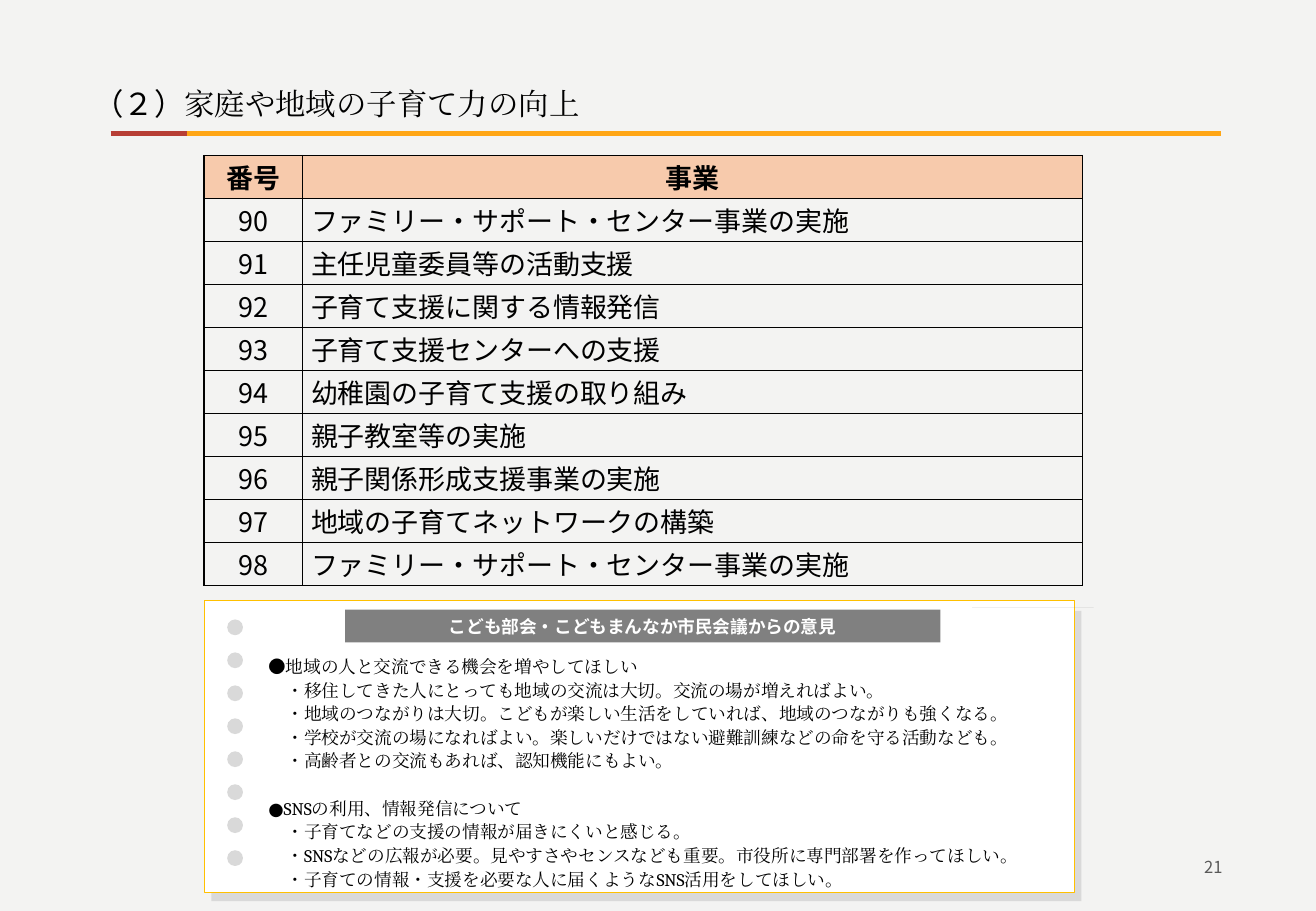
from lxml.etree import SubElement
from pptx import Presentation
from pptx.dml.color import RGBColor
from pptx.enum.shapes import MSO_CONNECTOR, MSO_SHAPE
from pptx.enum.text import MSO_ANCHOR, PP_ALIGN
from pptx.oxml.ns import qn
from pptx.util import Inches, Pt

THEME = {
    "background": "F3F3F2", "text": "000000", "muted": "595959", "light": "FFFFFF",
    "header": "F7CAAC", "amber": "FFA615", "red": "B73E35", "gold": "FFC000",
    "pale": "D9D9D9", "gray": "808080",
    "sans": "Noto Sans CJK JP", "serif": "Cambria", "latin": "Arial", "label": "Calibri",
    "title_size": 18, "table_size": 16, "note_size": 10.5, "number_size": 9.8,
}

TITLE = [("（２", "sans"), ("）", "latin"), ("家庭や地域の子育て力の向上", "serif")]
PAGE_NUMBER = "21"
TABLE_HEADER = ("番号", "事業")
FIRST_NUMBER = 90
PROJECTS = [
    "ファミリー・サポート・センター事業の実施",
    "主任児童委員等の活動支援",
    "子育て支援に関する情報発信",
    "子育て支援センターへの支援",
    "幼稚園の子育て支援の取り組み",
    "親子教室等の実施",
    "親子関係形成支援事業の実施",
    "地域の子育てネットワークの構築",
    "ファミリー・サポート・センター事業の実施",
]
NOTE_TITLE = "こども部会・こどもまんなか市民会議からの意見"
OPINIONS = {
    "●地域の人と交流できる機会を増やしてほしい": [
        "・移住してきた人にとっても地域の交流は大切。交流の場が増えればよい。",
        "・地域のつながりは大切。こどもが楽しい生活をしていれば、地域のつながりも強くなる。",
        "・学校が交流の場になればよい。楽しいだけではない避難訓練などの命を守る活動なども。",
        "・高齢者との交流もあれば、認知機能にもよい。",
    ],
    "●SNSの利用、情報発信について": [
        "・子育てなどの支援の情報が届きにくいと感じる。",
        "・SNSなどの広報が必要。見やすさやセンスなども重要。市役所に専門部署を作ってほしい。",
        "・子育ての情報・支援を必要な人に届くようなSNS活用をしてほしい。",
    ],
}
RULES = [(0.93, 10.05, "amber"), (0.91, 1.54, "red")]
RULE_TOP = 1.1
PANELS = [  # left, top, width, height, fill, line
    (1.74, 5.03, 7.16, 2.39, "pale", None),
    (1.68, 4.94, 7.16, 2.41, "light", "gold"),
]
HOLE_COUNT, HOLE_LEFT, HOLE_SIZE, FIRST_HOLE, LAST_HOLE = 8, 1.87, 0.13, 5.1, 7.0
CLIP_OUTLINE = [
    (8.6, 4.91), (8.56, 4.84), (8.52, 4.83), (8.47, 4.83), (8.41, 4.87), (8.38, 4.95),
    (8.41, 4.95), (8.44, 4.89), (8.48, 4.86), (8.54, 4.87), (8.57, 4.92), (8.56, 4.97),
    (8.45, 5.14), (8.35, 5.31), (8.32, 5.34), (8.28, 5.33), (8.27, 5.3), (8.27, 5.27),
    (8.35, 5.14), (8.38, 5.09), (8.45, 4.98), (8.48, 4.94), (8.47, 4.92), (8.45, 4.92),
    (8.32, 5.14), (8.25, 5.25), (8.24, 5.31), (8.27, 5.36), (8.33, 5.36), (8.37, 5.33),
    (8.49, 5.14), (8.59, 4.98),
]


def color(name):
    return RGBColor.from_string(THEME[name])


def set_values(target, values):
    for name, value in values.items():
        setattr(target, name, value)


def write(paragraph, text, size, font="sans", ink="text", bold=False, **layout):
    """Add one run and apply the paragraph layout."""
    set_values(paragraph, layout)
    run = paragraph.add_run()
    run.text = text
    set_values(run.font, {"size": Pt(THEME[size]), "name": THEME[font], "bold": bold})
    run.font.color.rgb = color(ink)
    SubElement(run.font._element, qn("a:ea"), typeface=THEME[font])


def indent(paragraph, left, first):
    properties = paragraph._p.get_or_add_pPr()
    properties.set("marL", str(Inches(left)))
    properties.set("indent", str(Inches(first)))


def add_text(slide, box, anchor):
    frame = slide.shapes.add_textbox(*map(Inches, box)).text_frame
    set_values(frame, {"word_wrap": True, "vertical_anchor": anchor})
    return frame


def paint(shape, fill, line=None):
    shape.shadow.inherit = False
    shape.fill.solid()
    shape.fill.fore_color.rgb = color(fill)
    if line:
        shape.line.color.rgb = color(line)
        shape.line.width = Pt(0.5)
    else:
        shape.line.fill.background()


def add_shape(slide, kind, box, fill, line=None):
    shape = slide.shapes.add_shape(kind, *map(Inches, box))
    paint(shape, fill, line)
    return shape


def add_borders(cell):
    properties = cell._tc.get_or_add_tcPr()
    for position, side in enumerate(("lnL", "lnR", "lnT", "lnB")):
        border = SubElement(properties, qn(f"a:{side}"), w=str(Pt(1)))
        fill = SubElement(border, qn("a:solidFill"))
        SubElement(fill, qn("a:srgbClr"), val=THEME["text"])
        properties.remove(border)
        properties.insert(position, border)


def add_title(slide):
    paragraph = add_text(slide, (0.52, 0.65, 9.93, 0.4), MSO_ANCHOR.MIDDLE).paragraphs[0]
    indent(paragraph, 0, 0.15)
    for text, font in TITLE:
        write(paragraph, text, "title_size", font)
    for start, end, ink in RULES:
        rule = slide.shapes.add_connector(
            MSO_CONNECTOR.STRAIGHT, Inches(start), Inches(RULE_TOP), Inches(end), Inches(RULE_TOP))
        rule.line.color.rgb = color(ink)
        rule.line.width = Pt(3)
        SubElement(rule._element.spPr, qn("a:effectLst"))


def add_projects(slide):
    rows = [TABLE_HEADER]
    rows += [(str(number), name) for number, name in enumerate(PROJECTS, FIRST_NUMBER)]
    box = map(Inches, (1.68, 1.28, 7.22, 3.54))
    table = slide.shapes.add_table(len(rows), 2, *box).table
    set_values(table, {"first_row": False, "horz_banding": False})
    for column, width in zip(table.columns, (0.81, 6.42)):
        column.width = Inches(width)
    for row_index, row in enumerate(rows):
        header = row_index == 0
        for column_index, text in enumerate(row):
            cell = table.cell(row_index, column_index)
            set_values(cell, {
                "vertical_anchor": MSO_ANCHOR.MIDDLE, "margin_top": 0, "margin_bottom": 0,
                "margin_left": Inches(0.07), "margin_right": Inches(0.07)})
            if header:
                cell.fill.solid()
                cell.fill.fore_color.rgb = color("header")
            else:
                cell.fill.background()
            add_borders(cell)
            centered = header or column_index == 0
            write(cell.text_frame.paragraphs[0], text, "table_size", bold=header,
                  alignment=PP_ALIGN.CENTER if centered else PP_ALIGN.LEFT)


def add_note(slide):
    for *box, fill, line in PANELS:
        add_shape(slide, MSO_SHAPE.RECTANGLE, box, fill, line)

    frame = add_shape(slide, MSO_SHAPE.RECTANGLE, (2.84, 5.02, 4.9, 0.27), "gray").text_frame
    set_values(frame, {"margin_left": 0, "margin_right": 0, "margin_top": 0, "margin_bottom": 0,
                       "vertical_anchor": MSO_ANCHOR.MIDDLE})
    write(frame.paragraphs[0], NOTE_TITLE, "note_size", "label", "light", True,
          alignment=PP_ALIGN.CENTER)

    builder = slide.shapes.build_freeform(*CLIP_OUTLINE[0], scale=Inches(1))
    builder.add_line_segments(CLIP_OUTLINE[1:], close=True)
    paint(builder.convert_to_shape(), "gray")

    step = (LAST_HOLE - FIRST_HOLE) / (HOLE_COUNT - 1)
    for index in range(HOLE_COUNT):
        add_shape(slide, MSO_SHAPE.OVAL,
                  (HOLE_LEFT, FIRST_HOLE + index * step, HOLE_SIZE, HOLE_SIZE), "pale")

    frame = add_text(slide, (2.11, 5.33, 6.83, 2.03), MSO_ANCHOR.TOP)
    paragraph = frame.paragraphs[0]
    for topic_index, (topic, remarks) in enumerate(OPINIONS.items()):
        for line_index, text in enumerate([topic, *remarks]):
            if topic_index or line_index:
                paragraph = frame.add_paragraph()
            new_topic = topic_index > 0 and line_index == 0
            write(paragraph, text, "note_size", "serif", alignment=PP_ALIGN.JUSTIFY,
                  line_spacing=Pt(14), space_before=Pt(14 if new_topic else 0))
            if line_index:
                indent(paragraph, 0.28, -0.13)


def main():
    presentation = Presentation()
    set_values(presentation, {"slide_width": Inches(10.83), "slide_height": Inches(7.5)})
    slide = presentation.slides.add_slide(presentation.slide_layouts[6])
    slide.background.fill.solid()
    slide.background.fill.fore_color.rgb = color("background")
    add_title(slide)
    add_projects(slide)
    frame = add_text(slide, (7.65, 6.98, 2.51, 0.31), MSO_ANCHOR.MIDDLE)
    write(frame.paragraphs[0], PAGE_NUMBER, "number_size", ink="muted", alignment=PP_ALIGN.RIGHT)
    add_note(slide)
    presentation.save("out.pptx")


if __name__ == "__main__":
    main()
